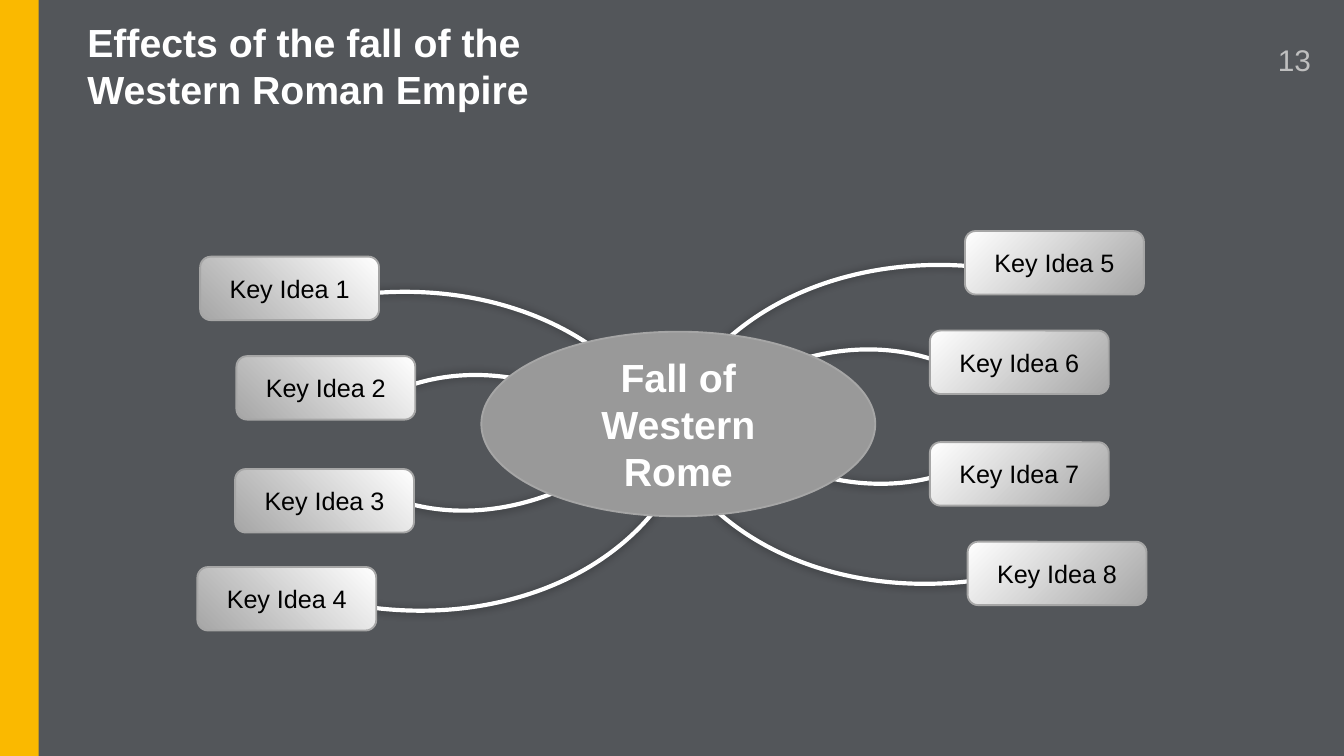
import pptx
import pptx.util
import pptx.dml.color
import pptx.enum.shapes
import pptx.enum.text
import pptx.oxml

Pt = pptx.util.Pt
SHAPE = pptx.enum.shapes.MSO_SHAPE
ALIGN = pptx.enum.text.PP_ALIGN
MIDDLE = pptx.enum.text.MSO_ANCHOR.MIDDLE
TOP = pptx.enum.text.MSO_ANCHOR.TOP

# Content: each idea has its box corner and the corner of its arc's frame
TITLE = "Effects of the fall of the Western Roman Empire"
PAGE_NUMBER = "13"
CENTRE = "Fall of Western Rome"
IDEAS = {
    "right": [
        ("Key Idea 5", (517, 123.8), (385.9, 108)),
        ("Key Idea 6", (498.2, 177.1), (306, 180)),
        ("Key Idea 7", (498.2, 236.9), (312.5, -67.7)),
        ("Key Idea 8", (518.4, 290.2), (380.2, 12.2)),
    ],
    "left": [
        ("Key Idea 1", (107.3, 137.5), (70.6, 122.4)),
        ("Key Idea 2", (126.7, 190.8), (150.5, 193.7)),
        ("Key Idea 3", (126, 251.3), (144, -53.3)),
        ("Key Idea 4", (105.8, 303.8), (77, 26.6)),
    ],
}
# Per row: left-side rotation, start and end angle in degrees, left-side flips
ARCS = [
    (79.2, (270, 357.73), True, False),
    (331.8, (271.4, 337.73), False, False),
    (28.2, (271.4, 332.69), False, True),
    (282.4, (270, 358.48), True, True),
]
ARC_SIZE = (263.5, 334.1)
BOX_SIZE = (95.8, 34)
ADJUSTMENT_PER_DEGREE = 0.6

COLORS = {
    "background": "53565A", "bar": "FAB900", "white": "FFFFFF",
    "black": "000000", "edge": "A6A6A6", "centre": "999999", "number": "BFBFBF",
}
SHADOW = (
    '<a:effectLst xmlns:a="http://schemas.openxmlformats.org/drawingml/2006/main">'
    '<a:outerShdw blurRad="63500" dist="0" dir="0" rotWithShape="0">'
    '<a:srgbClr val="000000"><a:alpha val="40000"/></a:srgbClr>'
    '</a:outerShdw></a:effectLst>'
)


def rgb(name):
    return pptx.dml.color.RGBColor.from_string(COLORS[name])


def write(shape, text, color, anchor=MIDDLE, align=ALIGN.LEFT, **font):
    frame = shape.text_frame
    frame.word_wrap = True
    frame.vertical_anchor = anchor
    para = frame.paragraphs[0]
    para.alignment = align
    span = para.add_run()
    span.text = text
    for key, value in {"name": "Arial", **font}.items():
        setattr(span.font, key, value)
    span.font.color.rgb = rgb(color)


def add_shape(page, kind, corner, size, fill=None, line=None, width=1):
    shape = page.shapes.add_shape(kind, *map(Pt, (*corner, *size)))
    shape.shadow.inherit = False
    if fill:
        shape.fill.solid()
        shape.fill.fore_color.rgb = rgb(fill)
    else:
        shape.fill.background()
    if line:
        shape.line.color.rgb = rgb(line)
        shape.line.width = Pt(width)
    else:
        shape.line.fill.background()
    return shape


def flip(shape, horizontal, vertical):
    frame = shape._element.spPr.find(pptx.oxml.ns.qn("a:xfrm"))
    for key, wanted in (("flipH", horizontal), ("flipV", vertical)):
        if wanted:
            frame.set(key, "1")


def add_branch(page, corner, rotation, angles, horizontal, vertical):
    arc = add_shape(page, SHAPE.ARC, corner, ARC_SIZE, line="white", width=2.25)
    for index, degrees in enumerate(angles):
        arc.adjustments[index] = degrees * ADJUSTMENT_PER_DEGREE
    arc.rotation = rotation
    flip(arc, horizontal, vertical)
    properties = arc._element.spPr
    properties.remove(properties.find(pptx.oxml.ns.qn("a:effectLst")))
    properties.append(pptx.oxml.parse_xml(SHADOW))


def add_idea(page, text, corner, mirrored):
    box = add_shape(page, SHAPE.ROUNDED_RECTANGLE, corner, BOX_SIZE, line="edge")
    box.fill.gradient()
    box.fill.gradient_angle = 315
    for stop, color in zip(box.fill.gradient_stops, ("white", "edge")):
        stop.color.rgb = rgb(color)
    flip(box, mirrored, False)
    write(box, text, "black", align=ALIGN.CENTER, size=Pt(13.5))


deck = pptx.Presentation()
deck.slide_width, deck.slide_height = Pt(720), Pt(405)
page = deck.slides.add_slide(deck.slide_layouts[5])
page.background.fill.solid()
page.background.fill.fore_color.rgb = rgb("background")

# Side bar
add_shape(page, SHAPE.RECTANGLE, (-0.7, 0), (21.4, 406), "bar")

# Arcs and idea boxes; the right side mirrors the left
for side, ideas in IDEAS.items():
    left = side == "left"
    for (text, corner, arc_corner), arc in zip(ideas, ARCS):
        rotation, angles, horizontal, vertical = arc
        add_branch(page, arc_corner, rotation if left else 360 - rotation,
                   angles, horizontal == left, vertical)
        add_idea(page, text, corner, left)

# Central topic
topic = add_shape(page, SHAPE.OVAL, (257.9, 177.7), (211, 98.9), "centre", "edge")
write(topic, CENTRE, "white", align=ALIGN.CENTER, size=Pt(21), bold=True)

# Title and page number
title = page.shapes.title
place = {"left": 39.6, "top": 5.8, "width": 315.4, "height": 58.3}
for key, value in place.items():
    setattr(title, key, Pt(value))
write(title, TITLE, "white", size=Pt(21), bold=True)
number = page.shapes.add_textbox(*map(Pt, (677.5, 18.7, 38.9, 26.6)))
write(number, PAGE_NUMBER, "number", anchor=TOP, size=Pt(16))

deck.save("out.pptx")
